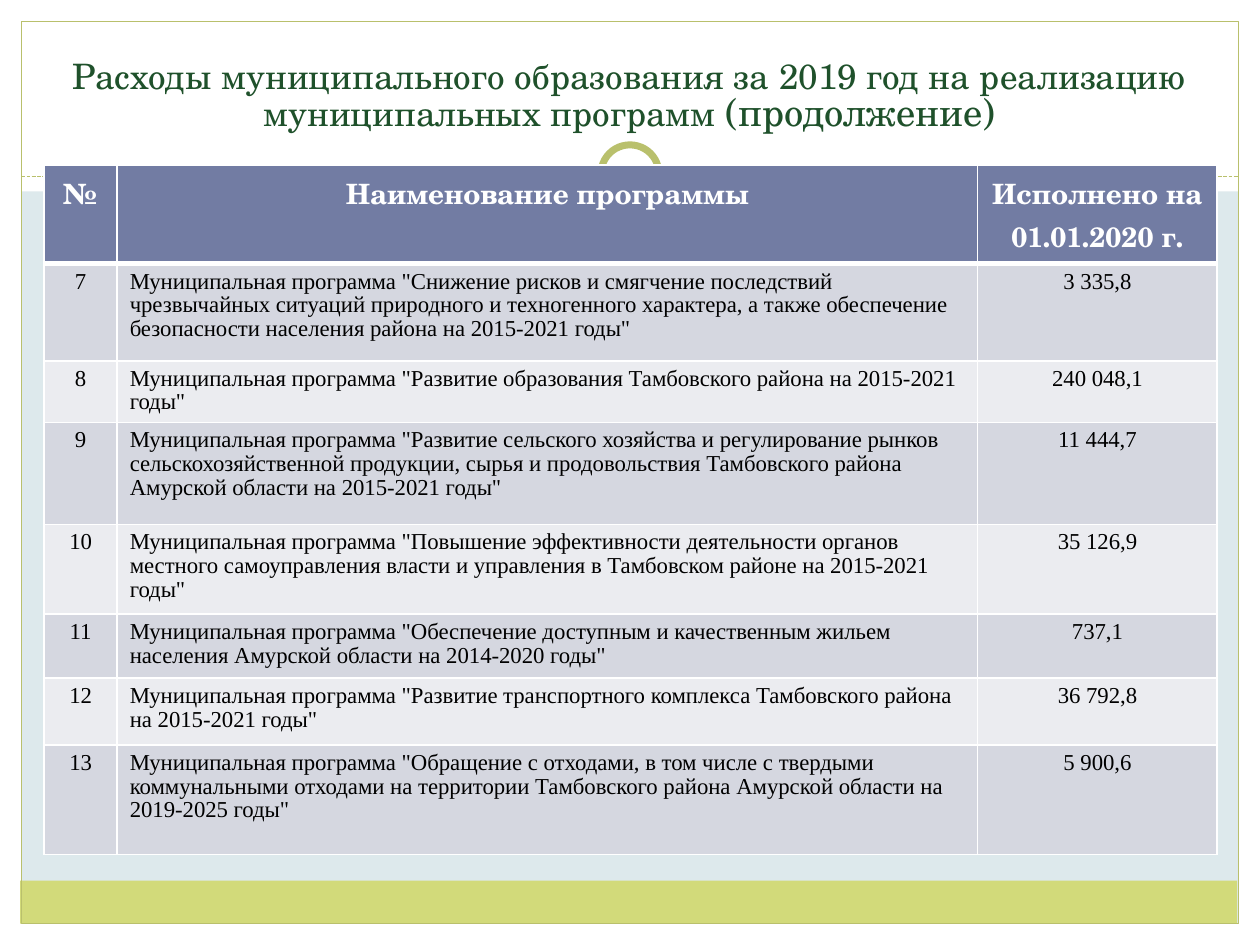
from dataclasses import dataclass
from typing import Optional

from lxml.etree import SubElement
from pptx import Presentation
from pptx.dml.color import RGBColor
from pptx.enum.dml import MSO_LINE_DASH_STYLE as Dash
from pptx.enum.shapes import MSO_CONNECTOR_TYPE as Link, MSO_AUTO_SHAPE_TYPE as Kind
from pptx.enum.text import MSO_VERTICAL_ANCHOR as Anchor, PP_PARAGRAPH_ALIGNMENT as Align
from pptx.oxml.ns import qn
from pptx.util import Inches, Pt

WHITE, OLIVE, LIME = "FFFFFF", "B9C06C", "D2DA7A"
SERIF, TIMES = "TeX Gyre Schola", "Times New Roman"
HEAD_FONT = {"name": SERIF, "size": Pt(16), "bold": True}
BODY_FONT = {"name": TIMES, "size": Pt(13), "bold": False}


@dataclass
class Block:
    """One plain shape of the backdrop."""
    left: float
    top: float
    width: float
    height: float
    fill: Optional[str] = None
    line: float = 0
    kind: Kind = Kind.RECTANGLE


@dataclass
class Entry:
    """One row of the table."""
    height: float
    mark: str
    name: str
    sum: str


BLOCKS = [
    Block(0, 7.33, 10, 0.17, WHITE),
    Block(0, 0, 10, 1.52, WHITE),
    Block(0, 0, 0.17, 7.5, WHITE),
    Block(9.83, 0, 0.17, 7.5, WHITE),
    Block(0.16, 6.99, 9.66, 0.34, LIME),
    Block(0.17, 0.17, 9.66, 7.16, line=0.75),
]
RINGS = [
    Block(4.67, 1.05, 0.67, 0.67, WHITE, kind=Kind.OVAL),
    Block(4.77, 1.15, 0.46, 0.46, WHITE, 4, Kind.OVAL),
]
WIDTHS = [0.58, 6.83, 1.9]
PLAN = "Муниципальная программа "
ROWS = [
    Entry(0.77, "№", "Наименование программы", "Исполнено на 01.01.2020 г."),
    Entry(0.77, "7", PLAN + '"Снижение рисков и смягчение последствий чрезвычайных ситуаций '
          'природного и техногенного характера, а также обеспечение безопасности населения '
          'района на 2015-2021 годы"', "3 335,8"),
    Entry(0.49, "8", PLAN + '"Развитие образования Тамбовского района на 2015-2021 годы"',
          "240 048,1"),
    Entry(0.81, "9", PLAN + '"Развитие сельского хозяйства и регулирование рынков '
          'сельскохозяйственной продукции, сырья и продовольствия Тамбовского района '
          'Амурской области на 2015-2021 годы"', "11 444,7"),
    Entry(0.71, "10", PLAN + '"Повышение эффективности деятельности органов местного '
          'самоуправления власти и управления в Тамбовском районе на 2015-2021 годы"',
          "35 126,9"),
    Entry(0.51, "11", PLAN + '"Обеспечение доступным и качественным жильем населения '
          'Амурской области на 2014-2020 годы"', "737,1"),
    Entry(0.53, "12", PLAN + '"Развитие транспортного комплекса Тамбовского района '
          'на 2015-2021 годы"', "36 792,8"),
    Entry(0.87, "13", PLAN + '"Обращение с отходами, в том числе с твердыми коммунальными '
          'отходами на территории Тамбовского района Амурской области на 2019-2025 годы"',
          "5 900,6"),
]


def paint(fill, tone: str) -> None:
    """Fill with a solid hex colour."""
    fill.solid()
    fill.fore_color.rgb = RGBColor.from_string(tone)


def style(target, values: dict) -> None:
    """Set each attribute named in the dict."""
    for key, value in values.items():
        setattr(target, key, value)


def draw_block(slide, item: Block) -> None:
    """Draw one backdrop shape."""
    box = [Inches(v) for v in (item.left, item.top, item.width, item.height)]
    shape = slide.shapes.add_shape(item.kind, *box)
    shape.shadow.inherit = False
    if item.fill:
        paint(shape.fill, item.fill)
    else:
        shape.fill.background()
    if item.line:
        paint(shape.line.fill, OLIVE)
        shape.line.width = Pt(item.line)
    else:
        shape.line.fill.background()


def draw_rule(slide) -> None:
    """Draw the dashed line under the title."""
    rule = slide.shapes.add_connector(
        Link.STRAIGHT, Inches(0.17), Inches(1.4), Inches(9.83), Inches(1.4))
    paint(rule.line.fill, OLIVE)
    style(rule.line, {"width": Pt(0.75), "dash_style": Dash.SQUARE_DOT})
    rule.line.dash_style = Dash.SQUARE_DOT
    SubElement(rule.element.spPr, qn("a:effectLst"))


def draw_title(slide) -> None:
    """Place and fill the title in front of the backdrop."""
    title = slide.shapes.title
    style(title, {"left": Inches(0.33), "top": Inches(0.25),
                  "width": Inches(9.33), "height": Inches(0.83)})
    frame = title.text_frame
    style(frame, {"word_wrap": True, "vertical_anchor": Anchor.BOTTOM,
                  "margin_bottom": Inches(0.02)})
    para = frame.paragraphs[0]
    style(para, {"alignment": Align.CENTER, "line_spacing": 0.8})
    parts = [("Расходы муниципального образования за 2019 год на реализацию "
              "муниципальных программ ", 20), ("(продолжение)", 22)]
    for text, size in parts:
        run = para.add_run()
        run.text = text
        style(run.font, {"name": SERIF, "size": Pt(size)})
        paint(run.font.fill, "1F512B")
    slide.shapes._spTree.append(title.element)


def edge(cell, sides: dict) -> None:
    """Give the cell white borders of the given widths."""
    props = cell._tc.get_or_add_tcPr()
    for side, width in sides.items():
        line = SubElement(props, qn(f"a:ln{side}"), w=str(Pt(width)))
        fill = SubElement(line, qn("a:solidFill"))
        SubElement(fill, qn("a:srgbClr"), val=WHITE)


def draw_cell(cell, text: str, row: int, col: int) -> None:
    """Write and format one table cell."""
    head = row == 0
    cell.text = text
    para = cell.text_frame.paragraphs[0]
    style(para, {"alignment": Align.LEFT if col == 1 and not head else Align.CENTER,
                 "line_spacing": 1.0 if head else 0.95})
    font = para.runs[0].font
    style(font, HEAD_FONT if head else BODY_FONT)
    paint(font.fill, WHITE if head else "000000")
    edge(cell, {"L": 1, "R": 1, "T": 3 if row == 1 else 1, "B": 3 if head else 1})
    paint(cell.fill, "727CA3" if head else ("EBECF0", "D5D7E0")[row % 2])


def draw_table(slide) -> None:
    """Draw the table of programmes."""
    high = sum(item.height for item in ROWS)
    table = slide.shapes.add_table(
        len(ROWS), len(WIDTHS), Inches(0.35), Inches(1.31),
        Inches(sum(WIDTHS)), Inches(high)).table
    for col, width in enumerate(WIDTHS):
        table.columns[col].width = Inches(width)
    for row, item in enumerate(ROWS):
        table.rows[row].height = Inches(item.height)
        for col, text in enumerate((item.mark, item.name, item.sum)):
            draw_cell(table.cell(row, col), text, row, col)


def main() -> None:
    """Build the slide and save it."""
    deck = Presentation()
    style(deck, {"slide_width": Inches(10), "slide_height": Inches(7.5)})
    slide = deck.slides.add_slide(deck.slide_layouts[5])
    paint(slide.background.fill, "DDE9EC")
    for item in BLOCKS:
        draw_block(slide, item)
    draw_rule(slide)
    for item in RINGS:
        draw_block(slide, item)
    draw_title(slide)
    draw_table(slide)
    deck.save("out.pptx")


if __name__ == "__main__":
    main()
